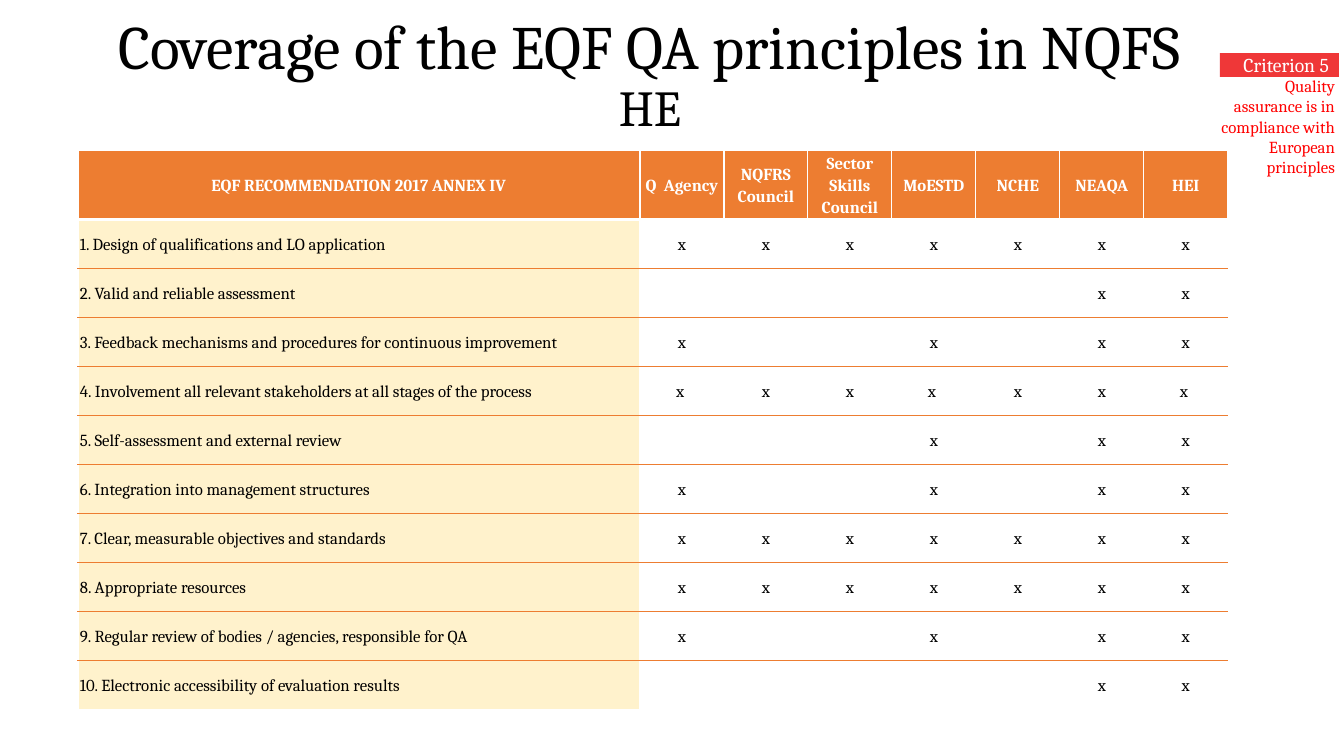
from dataclasses import dataclass

from lxml.etree import SubElement
from pptx import Presentation
from pptx.dml.color import RGBColor
from pptx.enum.shapes import MSO_SHAPE as Shape
from pptx.enum.text import MSO_ANCHOR as Anchor, MSO_AUTO_SIZE as AutoSize, PP_ALIGN as Align
from pptx.oxml.ns import qn
from pptx.util import Pt

PX = 12192000 / 1344


@dataclass(frozen=True)
class Theme:
    font: str = "Cambria"
    black: str = "000000"
    white: str = "FFFFFF"
    orange: str = "ED7D31"
    cream: str = "FFF2CC"
    badge: str = "EF3738"
    red: str = "FF0000"
    title: int = 44
    title_end: int = 36
    label: int = 14
    body: int = 12


theme = Theme()


def px(n):
    return round(n * PX)


def write(tf, text, size, color, align, spacing=1.0, bold=False, insets=(0, 0)):
    """Fill the first paragraph; insets are the left and right margins in px."""
    tf.word_wrap = True
    tf.margin_left, tf.margin_right = map(px, insets)
    tf.margin_top = tf.margin_bottom = 0
    p = tf.paragraphs[0]
    p.alignment, p.line_spacing = align, spacing
    r = p.add_run()
    r.text = text
    for name, value in {"name": theme.font, "size": Pt(size), "bold": bold}.items():
        setattr(r.font, name, value)
    r.font.color.rgb = RGBColor.from_string(color)
    return p


prs = Presentation()
prs.slide_width, prs.slide_height = px(1344), px(756)
s = prs.slides.add_slide(prs.slide_layouts[5])

# Criterion label and its explanation
badge = s.shapes.add_shape(Shape.RECTANGLE, px(1220), px(53), px(119), px(24))
badge.shadow.inherit = False
badge.fill.solid()
badge.fill.fore_color.rgb = RGBColor.from_string(theme.badge)
badge.line.fill.background()
badge.text_frame.vertical_anchor = Anchor.TOP
write(badge.text_frame, "Criterion 5", theme.label, theme.white, Align.RIGHT, insets=(10, 10))

criterion = s.shapes.add_textbox(px(1206), px(76), px(133), px(102))
write(criterion.text_frame, "Quality assurance is in compliance with European principles",
      theme.body, theme.red, Align.RIGHT, insets=(10, 4))

# Title
title = s.shapes.title
title.left, title.top, title.width, title.height = px(79), px(40), px(1142), px(74)
tf = title.text_frame
tf.auto_size, tf.vertical_anchor = AutoSize.NONE, Anchor.MIDDLE
p = write(tf, "Coverage of the EQF QA principles in NQFS", theme.title, theme.black,
          Align.CENTER, spacing=0.9, insets=(10, 10))
p.add_line_break()
write(tf, "HE", theme.title_end, theme.black, Align.CENTER, spacing=0.9, insets=(10, 10))

# Coverage table
bodies = ["Q  Agency", "NQFRS Council", "Sector Skills Council", "MoESTD", "NCHE", "NEAQA", "HEI"]
principles = [
    ("1. Design of qualifications and LO application", "x|x|x|x|x|x|x"),
    ("2. Valid and reliable assessment", "|||||x|x"),
    ("3. Feedback mechanisms and procedures for continuous improvement", "x|||x||x|x"),
    ("4. Involvement all relevant stakeholders at all stages of the process", "x |x|x|x |x|x|x "),
    ("5. Self-assessment and external review", "|||x||x|x"),
    ("6. Integration into management structures", "x|||x||x|x"),
    ("7. Clear, measurable objectives and standards", "x|x|x|x|x|x|x"),
    ("8. Appropriate resources", "x|x|x|x|x|x|x"),
    ("9. Regular review of bodies / agencies, responsible for QA", "x|||x||x|x"),
    ("10. Electronic accessibility of evaluation results", "|||||x|x"),
]
rows = [["EQF RECOMMENDATION 2017 ANNEX IV", *bodies]]
rows += [[principle, *marks.split("|")] for principle, marks in principles]
col_widths = [562] + [84] * len(bodies)
row_heights = [65] + [49] * len(principles)
last = len(principles)

table = s.shapes.add_table(len(rows), len(col_widths), px(78), px(150),
                           px(sum(col_widths)), px(sum(row_heights))).table
table.horz_banding = False
for col, width in zip(table.columns, col_widths):
    col.width = px(width)
for row, height in zip(table.rows, row_heights):
    row.height = px(height)

for i, texts in enumerate(rows):
    head = i == 0
    top = (theme.orange, 1) if i > 1 else (theme.white, 3 if i else 1)
    bottom = (theme.white, 3 if head else 1) if i in (0, last) else (theme.orange, 1)
    borders = {"lnL": (theme.white, 1), "lnR": (theme.white, 1), "lnT": top, "lnB": bottom}
    for j, text in enumerate(texts):
        cell = table.cell(i, j)
        name_cell = j == 0 and not head
        cell.vertical_anchor = Anchor.MIDDLE
        cell.margin_top = cell.margin_bottom = 0
        cell.margin_left = cell.margin_right = px(2 if name_cell else 1)
        tc_pr = cell._tc.get_or_add_tcPr()
        for tag, (color, width) in borders.items():
            ln = SubElement(tc_pr, qn(f"a:{tag}"), w=str(Pt(width)))
            SubElement(SubElement(ln, qn("a:solidFill")), qn("a:srgbClr"), val=color)
        if head or name_cell:
            cell.fill.solid()
            cell.fill.fore_color.rgb = RGBColor.from_string(theme.orange if head else theme.cream)
        else:
            cell.fill.background()
        if text:
            p = cell.text_frame.paragraphs[0]
            p.alignment = Align.LEFT if name_cell else Align.CENTER
            p.line_spacing = 1.15
            r = p.add_run()
            r.text = text
            for name, value in {"name": theme.font, "size": Pt(theme.body), "bold": head}.items():
                setattr(r.font, name, value)
            r.font.color.rgb = RGBColor.from_string(theme.white if head else theme.black)

prs.save("out.pptx")
